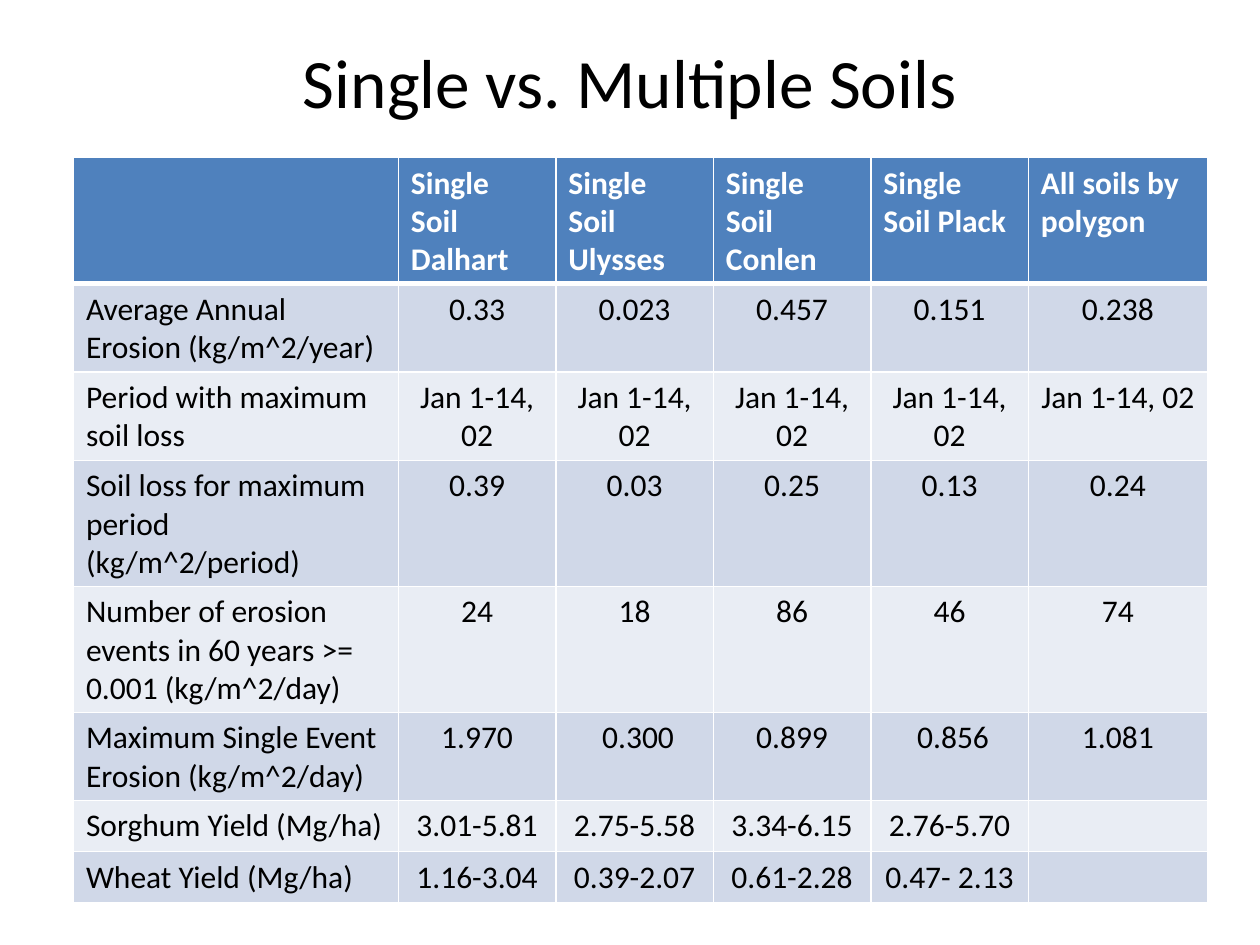
from lxml import etree
from pptx import Presentation
from pptx import util as u
from pptx.dml.color import RGBColor
from pptx.enum import text
from pptx.oxml import ns

COLORS = {"header": "4F81BD", "odd": "D0D8E8", "even": "E9EDF4",
          "white": "FFFFFF", "black": "000000"}


def write(frame, content, size=18, color="black", bold=False, align=text.PP_ALIGN.LEFT):
    paragraph = frame.paragraphs[0]
    paragraph.alignment = align
    run = paragraph.add_run()
    run.text = content
    run.font.name = "Calibri"
    run.font.size = u.Pt(size)
    run.font.bold = bold
    run.font.color.rgb = RGBColor.from_string(COLORS[color])


def add_border(cell, side, points):
    line = etree.SubElement(cell._tc.get_or_add_tcPr(), ns.qn(f"a:ln{side}"), w=str(u.Pt(points)))
    fill = etree.SubElement(line, ns.qn("a:solidFill"))
    etree.SubElement(fill, ns.qn("a:srgbClr"), val=COLORS["white"])


prs = Presentation()
prs.slide_width = u.Cm(25.4)
prs.slide_height = u.Cm(19.05)
slide = prs.slides.add_slide(prs.slide_layouts[6])

title = slide.shapes.add_textbox(u.Cm(1.27), u.Cm(0.64), u.Cm(22.86), u.Cm(1.98)).text_frame
title.word_wrap = True
title.vertical_anchor = text.MSO_ANCHOR.MIDDLE
write(title, "Single vs. Multiple Soils", size=39.6, align=text.PP_ALIGN.CENTER)

soil_results = [
    ["", "Single Soil Dalhart", "Single Soil Ulysses", "Single Soil Conlen",
     "Single Soil Plack", "All soils by polygon"],
    ["Average Annual Erosion (kg/m^2/year)", "0.33", "0.023", "0.457", "0.151", "0.238"],
    ["Period with maximum soil loss"] + ["Jan 1-14, 02"] * 5,
    ["Soil loss for maximum period (kg/m^2/period)", "0.39", "0.03", "0.25", "0.13", "0.24"],
    ["Number of erosion events in 60 years >= 0.001 (kg/m^2/day)", "24", "18", "86", "46", "74"],
    ["Maximum Single Event Erosion (kg/m^2/day)", "1.970", " 0.300", "0.899", " 0.856", "1.081"],
    ["Sorghum Yield (Mg/ha)", "3.01-5.81", "2.75-5.58", "3.34-6.15", "2.76-5.70", ""],
    ["Wheat Yield (Mg/ha)", "1.16-3.04", "0.39-2.07", "0.61-2.28", "0.47- 2.13", ""],
]
column_widths = [6.55] + [3.175] * 4 + [3.61]
row_height = 1.03

results = slide.shapes.add_table(
    len(soil_results), len(column_widths), u.Cm(1.48), u.Cm(3.18),
    u.Cm(sum(column_widths)), u.Cm(row_height * len(soil_results))).table
for column, width in zip(results.columns, column_widths):
    column.width = u.Cm(width)

for row_index, measures in enumerate(soil_results):
    results.rows[row_index].height = u.Cm(row_height)
    is_header = row_index == 0
    band = "header" if is_header else "odd" if row_index % 2 else "even"
    for column_index, content in enumerate(measures):
        cell = results.cell(row_index, column_index)
        add_border(cell, "L", 1)
        add_border(cell, "R", 1)
        add_border(cell, "T", 3 if row_index == 1 else 1)
        add_border(cell, "B", 3 if is_header else 1)
        cell.fill.solid()
        cell.fill.fore_color.rgb = RGBColor.from_string(COLORS[band])
        if content:
            is_value = column_index > 0 and not is_header
            write(cell.text_frame, content, bold=is_header,
                  color="white" if is_header else "black",
                  align=text.PP_ALIGN.CENTER if is_value else text.PP_ALIGN.LEFT)

prs.save("out.pptx")
